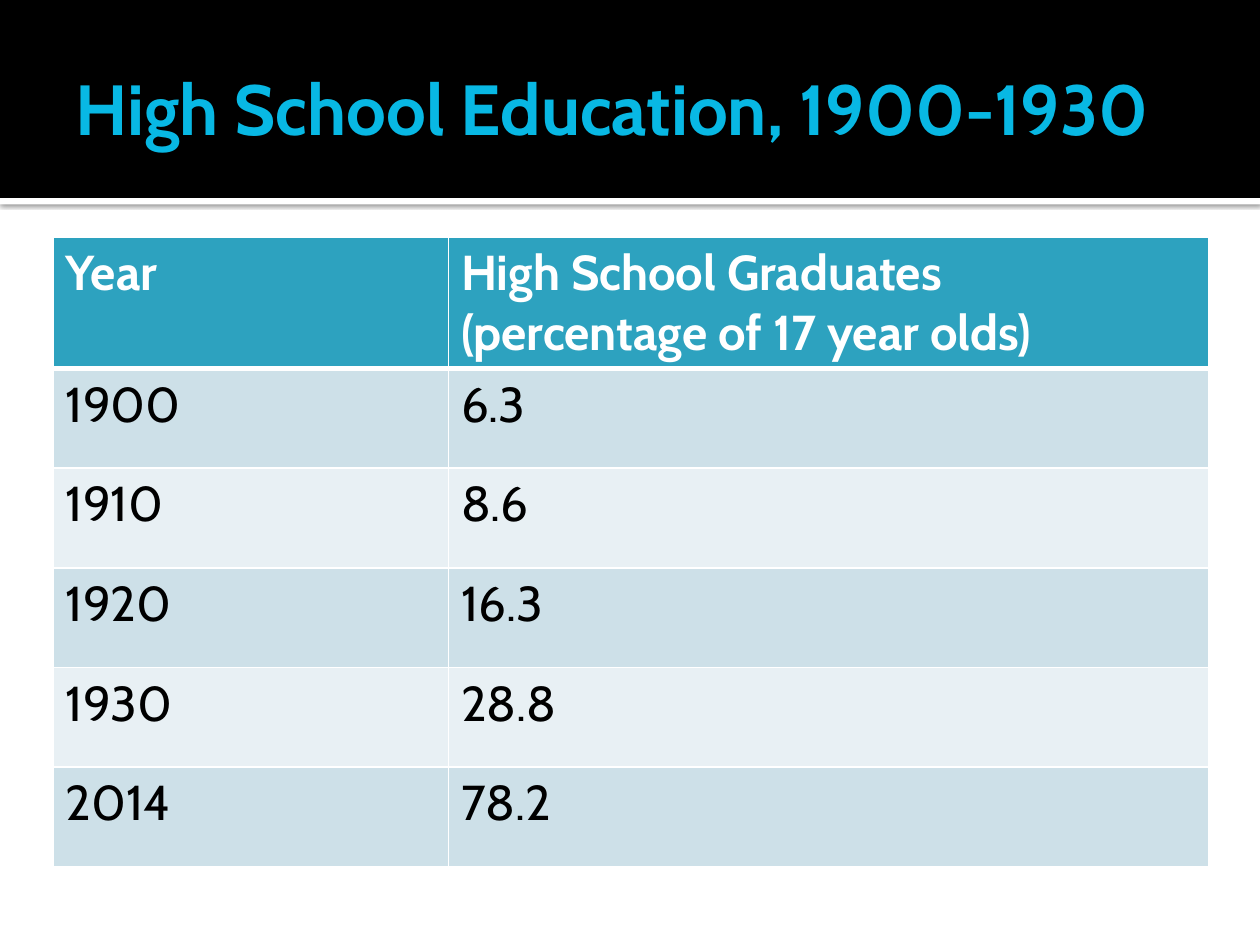
from lxml import etree
from pptx import Presentation
from pptx.dml.color import RGBColor
from pptx.enum.shapes import MSO_SHAPE
from pptx.enum.text import MSO_ANCHOR
from pptx.oxml.ns import qn
from pptx.util import Cm, Pt

RECTANGLE = MSO_SHAPE.RECTANGLE
MIDDLE = MSO_ANCHOR.MIDDLE

FONT = "Cabin"
BLACK = RGBColor(0x00, 0x00, 0x00)
WHITE = RGBColor(0xFF, 0xFF, 0xFF)
TITLE_BLUE = RGBColor(0x08, 0xB8, 0xE4)
HEADER_TEAL = RGBColor(0x2D, 0xA2, 0xBF)
BAND_COLORS = (RGBColor(0xCD, 0xE0, 0xE8), RGBColor(0xE8, 0xF0, 0xF4))

GRADUATES = [
    ("Year", "High School Graduates (percentage of 17 year olds)"),
    ("1900", "6.3"),
    ("1910", "8.6"),
    ("1920", "16.3"),
    ("1930", "28.8"),
    ("2014", "78.2"),
]


def style_text(paragraph, size, color, bold):
    font = paragraph.font
    font.name, font.size, font.bold = FONT, Pt(size), bold
    font.color.rgb = color


def add_bar(slide, left, top, width, height, color):
    bar = slide.shapes.add_shape(RECTANGLE, left, top, width, height)
    bar.shadow.inherit = False
    bar.fill.solid()
    bar.fill.fore_color.rgb = color
    bar.line.fill.background()
    return bar


def add_drop_shadow(shape, blur, distance, opacity):
    effects = shape._element.spPr.find(qn("a:effectLst"))
    shadow = etree.SubElement(
        effects, qn("a:outerShdw"), blurRad=str(Pt(blur)), dist=str(Pt(distance)),
        dir="5400000", algn="tl", rotWithShape="0")
    color = etree.SubElement(shadow, qn("a:srgbClr"), val=str(BLACK))
    etree.SubElement(color, qn("a:alpha"), val=str(opacity * 1000))


def add_title_band(slide, left, top, width, height, title):
    """Black band with the title, and a shadowed white strip below it."""
    strip = add_bar(slide, left, top + height, width, Cm(0.13), WHITE)
    add_drop_shadow(strip, blur=2.5, distance=0.8, opacity=60)
    add_bar(slide, left, top, width, height, BLACK)

    margin = Cm(1.27)
    title_box = slide.shapes.add_textbox(
        left + margin, top + Cm(0.43), width - 2 * margin, Cm(3.48))
    frame = title_box.text_frame
    frame.word_wrap = True
    frame.vertical_anchor = MIDDLE
    frame.margin_right = Cm(0.13)
    frame.text = title
    style_text(frame.paragraphs[0], 40.5, TITLE_BLUE, True)


def set_borders(cell, top, bottom):
    """White borders: 1 pt at the sides, the given points above and below."""
    properties = cell._tc.get_or_add_tcPr()
    for side, points in (("L", 1), ("R", 1), ("T", top), ("B", bottom)):
        line = etree.SubElement(properties, qn(f"a:ln{side}"), w=str(Pt(points)))
        fill = etree.SubElement(line, qn("a:solidFill"))
        etree.SubElement(fill, qn("a:srgbClr"), val=str(WHITE))


def add_graduates_table(slide, left, top, width, height, rows):
    year_width, row_height = Cm(7.97), Cm(2.01)
    table = slide.shapes.add_table(
        len(rows), len(rows[0]), left, top, width, height).table
    table.columns[0].width = year_width
    table.columns[1].width = width - year_width

    for i, texts in enumerate(rows):
        is_header = i == 0
        table.rows[i].height = (
            height - row_height * (len(rows) - 1) if is_header else row_height)
        for j, text in enumerate(texts):
            cell = table.cell(i, j)
            cell.text = text
            style_text(cell.text_frame.paragraphs[0], 28,
                       WHITE if is_header else BLACK, is_header)
            set_borders(cell, top=3 if i == 1 else 1, bottom=3 if is_header else 1)
            cell.fill.solid()
            cell.fill.fore_color.rgb = (
                HEADER_TEAL if is_header else BAND_COLORS[(i - 1) % 2])


def main():
    presentation = Presentation()
    presentation.slide_width, presentation.slide_height = Cm(25.4), Cm(19.05)
    slide = presentation.slides.add_slide(presentation.slide_layouts[6])
    add_title_band(slide, Cm(0), Cm(0), presentation.slide_width, Cm(3.99),
                   "High School Education, 1900-1930")
    add_graduates_table(slide, Cm(1.07), Cm(4.78), Cm(23.29), Cm(12.7), GRADUATES)
    presentation.save("out.pptx")


if __name__ == "__main__":
    main()
